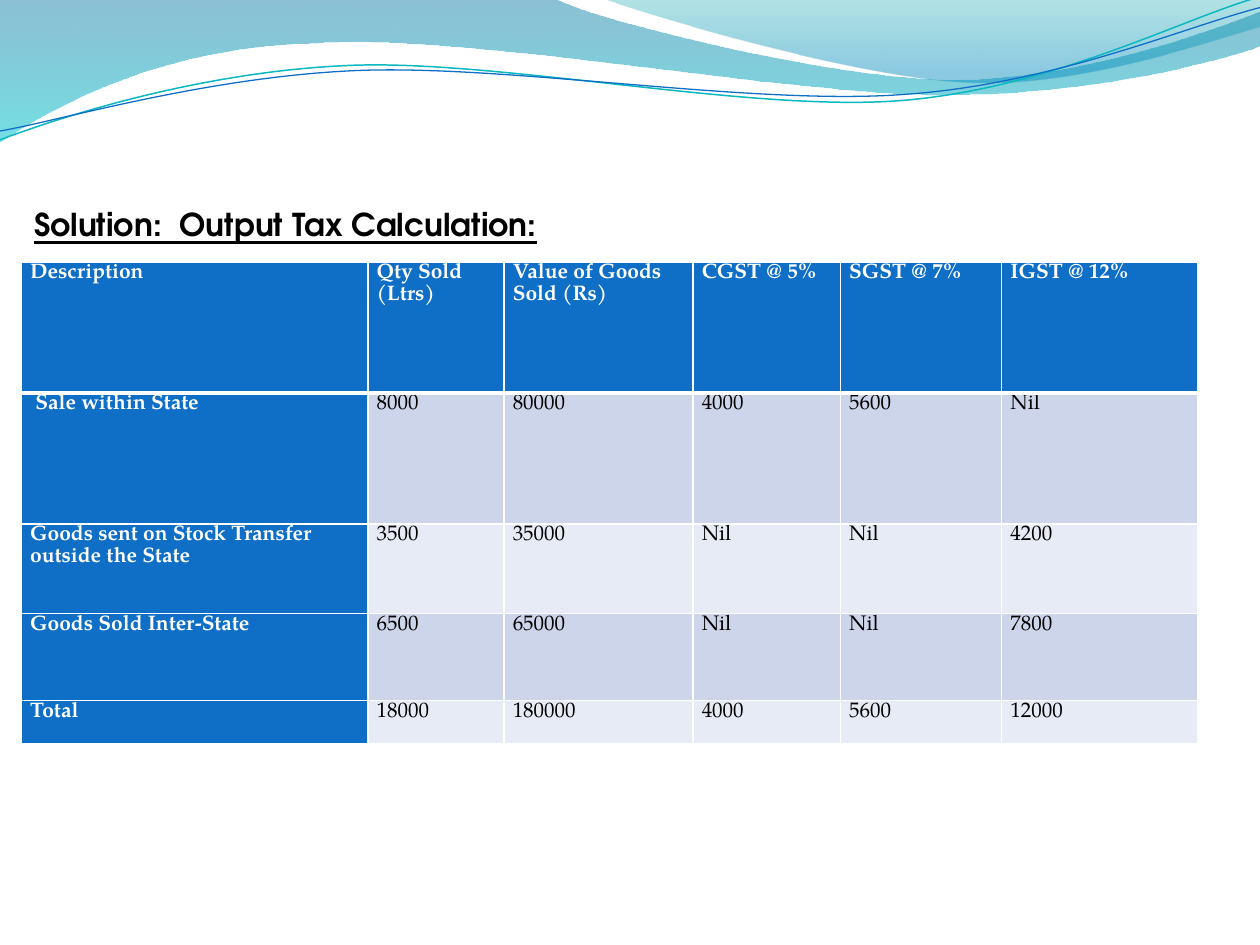
import math
from dataclasses import dataclass
from typing import Optional

from lxml import etree
from pptx import Presentation
from pptx.dml.color import RGBColor
from pptx.enum import text
from pptx.oxml import ns
from pptx.util import Inches, Pt

BLACK = RGBColor(0x00, 0x00, 0x00)
WHITE = RGBColor(0xFF, 0xFF, 0xFF)
BLUE = RGBColor(0x0F, 0x6F, 0xC6)
BAND_DARK = RGBColor(0xCC, 0xD5, 0xEA)
BAND_LIGHT = RGBColor(0xE7, 0xEB, 0xF5)
TEAL = RGBColor(0x0A, 0xB8, 0xBF)
DEEP_BLUE = RGBColor(0x00, 0x74, 0xA1)
CYAN = RGBColor(0x00, 0xC6, 0xCF)
SEA = RGBColor(0x00, 0xA1, 0xA9)
SKY = RGBColor(0x00, 0x8B, 0xBF)

TITLE_FONT = "TeX Gyre Adventor"
BODY_FONT = "TeX Gyre Pagella"

COLUMNS = [2.75, 1.08, 1.5, 1.17, 1.28, 1.56]
ROWS = [1.04, 1.04, 0.71, 0.69, 0.34]
DATA = [
    ["Description", "Qty Sold (Ltrs)", "Value of Goods Sold (Rs)",
     "CGST @ 5%", "SGST @ 7%", "IGST @ 12%"],
    [" Sale within State", "8000", "80000", "4000", "5600", "Nil"],
    ["Goods sent on Stock Transfer outside the State",
     "3500", "35000", "Nil", "Nil", "4200"],
    ["Goods Sold Inter-State", "6500", "65000", "Nil", "Nil", "7800"],
    ["Total", "18000", "180000", "4000", "5600", "12000"],
]


@dataclass
class Stop:
    position: float
    color: RGBColor
    opacity: int


@dataclass
class Wave:
    box: tuple
    start: tuple
    segments: list
    stops: tuple = ()
    line: Optional[RGBColor] = None
    width: float = 0
    rotation: float = 0


WAVES = [
    Wave((-0.01, -0.01, 10.02, 1.14), (0, 0), [
        (4.4, -0.01),
        (4.76, 0.17, 6.64, 0.63, 7.58, 0.63),
        (8.53, 0.63, 9.58, 0.26, 10, 0.09),
        (10.01, 0.36),
        (9.83, 0.44, 8.7, 0.76, 7.46, 0.75),
        (6.22, 0.75, 3.82, 0.28, 2.57, 0.34),
        (1.29, 0.36, 0.46, 0.83, -0.01, 1.13),
        (0, 0),
    ], stops=(Stop(0, DEEP_BLUE, 45), Stop(1, CYAN, 55))),
    Wave((4.79, -0.01, 5.21, 0.7), (4.79, -0.01), [
        (5.09, 0.11, 6.82, 0.62, 7.69, 0.65),
        (8.56, 0.69, 9.61, 0.32, 10, 0.21),
        (10, 0),
        (4.79, -0.01),
    ], stops=(Stop(0, SEA, 30), Stop(0.8, SKY, 45))),
    Wave((-0.02, 0.22, 10.02, 0.71), (0, 1.11), [
        (0.48, 0.93, 1.58, 0.57, 2.77, 0.52),
        (3.95, 0.47, 5.93, 0.89, 7.13, 0.8),
        (8.33, 0.71, 9.38, 0.15, 9.98, -0.02),
    ], line=TEAL, width=0.85, rotation=357.3),
    Wave((-0.02, 0.3, 10.03, 0.58), (0, 1.04), [
        (0.47, 0.96, 1.64, 0.61, 2.83, 0.56),
        (4.03, 0.51, 5.97, 0.84, 7.17, 0.75),
        (8.36, 0.67, 9.41, 0.21, 10, 0.06),
    ], line=BLUE, width=0.75, rotation=357.3),
]


def to_local(wave: Wave, x: float, y: float) -> tuple:
    left, top, width, height = wave.box
    dx, dy = x - left - width / 2, y - top - height / 2
    a = math.radians(-wave.rotation)
    return (Inches(dx * math.cos(a) - dy * math.sin(a) + width / 2),
            Inches(dx * math.sin(a) + dy * math.cos(a) + height / 2))


def add_curves(sp, wave: Wave) -> None:
    sp.left, sp.top, sp.width, sp.height = map(Inches, wave.box)
    outline = next(sp._element.iter(ns.qn("a:path")))
    outline.set("w", str(sp.width))
    outline.set("h", str(sp.height))
    for child in list(outline):
        outline.remove(child)
    moves = [("moveTo", wave.start)]
    moves += [("lnTo" if len(seg) == 2 else "cubicBezTo", seg) for seg in wave.segments]
    for tag, coords in moves:
        move = etree.SubElement(outline, ns.qn(f"a:{tag}"))
        for point in zip(coords[::2], coords[1::2]):
            x, y = to_local(wave, *point)
            etree.SubElement(move, ns.qn("a:pt"), x=str(x), y=str(y))
    if wave.stops:
        etree.SubElement(outline, ns.qn("a:close"))
    sp.rotation = wave.rotation


def draw_wave(s, wave: Wave) -> None:
    builder = s.shapes.build_freeform(*map(Inches, wave.start))
    builder.add_line_segments([tuple(map(Inches, seg[-2:])) for seg in wave.segments],
                              close=False)
    sp = builder.convert_to_shape()
    add_curves(sp, wave)
    sp.shadow.inherit = False
    if not wave.stops:
        sp.fill.background()
        sp.line.color.rgb = wave.line
        sp.line.width = Pt(wave.width)
        return
    sp.line.fill.background()
    sp.fill.gradient()
    sp.fill.gradient_angle = 270
    for target, stop in zip(sp.fill.gradient_stops, wave.stops):
        target.position = stop.position
        target.color.rgb = stop.color
    colors = list(sp._element.spPr.iter(ns.qn("a:srgbClr")))
    for color, stop in zip(colors, wave.stops):
        etree.SubElement(color, ns.qn("a:alpha"), val=str(stop.opacity * 1000))


def write(tf, content: str, *, font: str, size: float, color: RGBColor,
          bold: bool = False, underline: bool = False,
          spacing: Optional[float] = None) -> None:
    tf.word_wrap = True
    p = tf.paragraphs[0]
    p.alignment = text.PP_ALIGN.LEFT
    if spacing:
        p.line_spacing = spacing
    r = p.add_run()
    r.text = content
    r.font.name = font
    r.font.size = Pt(size)
    r.font.color.rgb = color
    r.font.bold = bold
    r.font.underline = underline


def set_border(cell, side: str, width: float, color: RGBColor) -> None:
    tc_pr = cell._tc.get_or_add_tcPr()
    ln = etree.SubElement(tc_pr, ns.qn(f"a:{side}"), w=str(Pt(width)))
    fill = etree.SubElement(ln, ns.qn("a:solidFill"))
    etree.SubElement(fill, ns.qn("a:srgbClr"), val=str(color))


def draw_title(s) -> None:
    sp = s.shapes.title
    sp.left, sp.top = Inches(0.17), Inches(1.58)
    sp.width, sp.height = Inches(9.33), Inches(0.71)
    tf = sp.text_frame
    tf.vertical_anchor = text.MSO_ANCHOR.TOP
    tf.auto_size = text.MSO_AUTO_SIZE.NONE
    write(tf, "Solution:  Output Tax Calculation:", font=TITLE_FONT, size=18,
          color=BLACK, bold=True, underline=True)


def draw_table(s) -> None:
    table = s.shapes.add_table(len(ROWS), len(COLUMNS), Inches(0.17), Inches(2.08),
                               Inches(sum(COLUMNS)), Inches(sum(ROWS))).table
    table.first_col = True
    for column, width in zip(table.columns, COLUMNS):
        column.width = Inches(width)
    for row, height in zip(table.rows, ROWS):
        row.height = Inches(height)
    for i, values in enumerate(DATA):
        for j, value in enumerate(values):
            cell = table.cell(i, j)
            heading = i == 0 or j == 0
            cell.margin_left = cell.margin_right = Inches(0.07)
            cell.margin_top = cell.margin_bottom = 0
            set_border(cell, "lnL", 1, WHITE)
            set_border(cell, "lnR", 1, WHITE)
            set_border(cell, "lnT", 3 if i == 1 else 1, WHITE)
            set_border(cell, "lnB", 3 if i == 0 else 1, WHITE)
            cell.fill.solid()
            band = BAND_DARK if i % 2 else BAND_LIGHT
            cell.fill.fore_color.rgb = BLUE if heading else band
            write(cell.text_frame, value, font=BODY_FONT, size=12, spacing=1.07,
                  color=WHITE if heading else BLACK, bold=heading)


def main() -> None:
    prs = Presentation()
    prs.slide_width, prs.slide_height = Inches(10), Inches(7.5)
    s = prs.slides.add_slide(prs.slide_layouts[5])
    for wave in WAVES:
        draw_wave(s, wave)
    draw_title(s)
    draw_table(s)
    prs.save("out.pptx")


if __name__ == "__main__":
    main()
